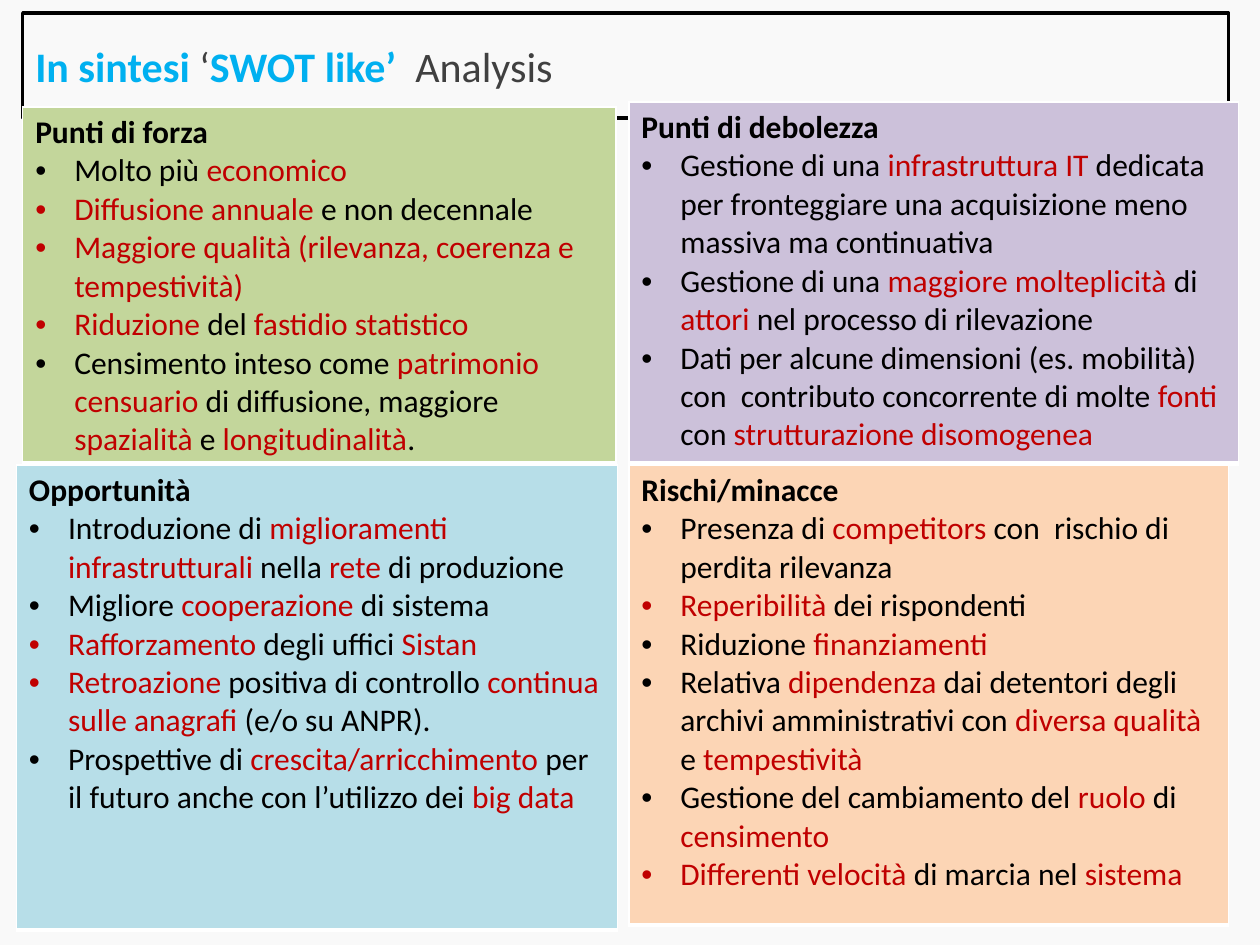
from dataclasses import dataclass

from lxml import etree
from pptx import Presentation
from pptx.dml.color import RGBColor
from pptx.enum.text import MSO_ANCHOR, MSO_AUTO_SIZE, PP_ALIGN
from pptx.oxml.ns import qn
from pptx.util import Inches, Pt

LEFT = PP_ALIGN.LEFT
MIDDLE = MSO_ANCHOR.MIDDLE
GROW = MSO_AUTO_SIZE.SHAPE_TO_FIT_TEXT
TITLE_ONLY = 5


@dataclass(frozen=True)
class Theme:
    font: str = "Calibri"
    title_size: int = 24
    body_size: int = 18
    background: str = "F9F9F9"
    title: str = "404040"
    title_accent: str = "00B0F0"
    text: str = "000000"
    accent: str = "C00000"
    frame: str = "000000"
    border: str = "FFFFFF"
    strengths: str = "C3D69B"
    weaknesses: str = "CCC1DA"
    opportunities: str = "B7DEE8"
    threats: str = "FCD5B5"


@dataclass(frozen=True)
class Quadrant:
    heading: str
    left: float
    top: float
    width: float
    height: float
    fill: str
    points: tuple[str, ...]


THEME = Theme()
BULLET_INDENT = 0.31
BORDERS = {"L": 1, "R": 1, "T": 1, "B": 3}

# Asterisks enclose the highlighted words
TITLE = "*In sintesi *‘*SWOT like’*  Analysis"
QUADRANTS = (
    Quadrant("Punti di forza", 0.18, 0.85, 4.71, 2.83, THEME.strengths, (
        "Molto più *economico*",
        "*Diffusione annuale* e non decennale",
        "*Maggiore qualità (rilevanza, coerenza e tempestività)*",
        "*Riduzione* del *fastidio statistico*",
        "Censimento inteso come *patrimonio censuario* di diffusione, "
        "maggiore *spazialità* e *longitudinalità*.",
    )),
    Quadrant("Opportunità", 0.13, 3.69, 4.77, 3.69, THEME.opportunities, (
        "Introduzione di *miglioramenti infrastrutturali* nella *rete* di produzione",
        "Migliore *cooperazione* di sistema",
        "*Rafforzamento* degli uffici *Sistan*",
        "*Retroazione* positiva di controllo *continua sulle anagrafi* (e/o su ANPR).",
        "Prospettive di *crescita/arricchimento* per il futuro anche "
        "con l’utilizzo dei *big data*",
    )),
    Quadrant("Punti di debolezza", 4.99, 0.81, 4.84, 2.87, THEME.weaknesses, (
        "Gestione di una *infrastruttura IT* dedicata per fronteggiare "
        "una acquisizione meno massiva ma continuativa",
        "Gestione di una *maggiore molteplicità* di *attori* "
        "nel processo di rilevazione",
        "Dati per alcune dimensioni (es. mobilità) con  contributo concorrente "
        "di molte *fonti* con *strutturazione disomogenea*",
    )),
    Quadrant("Rischi/minacce", 4.99, 3.69, 4.76, 3.65, THEME.threats, (
        "Presenza di *competitors *con  rischio di perdita rilevanza",
        "*Reperibilità* dei rispondenti",
        "Riduzione *finanziamenti*",
        "Relativa *dipendenza* dai detentori degli archivi amministrativi "
        "con *diversa qualità *e *tempestività*",
        "Gestione del cambiamento del *ruolo* di *censimento*",
        "*Differenti velocità* di marcia nel *sistema*",
    )),
)


def write(para, text: str, *, size: int, color: str, accent: str,
          bold: bool = False, accent_bold: bool = False) -> None:
    """Fill a paragraph, giving the words between asterisks the accent format."""
    para.alignment = LEFT
    for index, part in enumerate(text.split("*")):
        if not part:
            continue
        marked = index % 2 == 1
        span = para.add_run()
        span.text = part
        span.font.name = THEME.font
        span.font.size = Pt(size)
        span.font.bold = accent_bold if marked else bold
        span.font.color.rgb = RGBColor.from_string(accent if marked else color)


def add_bullet(para) -> None:
    properties = para._p.get_or_add_pPr()
    properties.set("marL", str(Inches(BULLET_INDENT)))
    properties.set("indent", str(-Inches(BULLET_INDENT)))
    etree.SubElement(properties, qn("a:buFont"), typeface="Arial")
    etree.SubElement(properties, qn("a:buChar"), char="•")


def add_borders(cell) -> None:
    properties = cell._tc.get_or_add_tcPr()
    for side, points in BORDERS.items():
        line = etree.SubElement(properties, qn(f"a:ln{side}"), w=str(Pt(points)))
        fill = etree.SubElement(line, qn("a:solidFill"))
        etree.SubElement(fill, qn("a:srgbClr"), val=THEME.border)


def draw_title(page) -> None:
    box = page.shapes.title
    box.left, box.top = Inches(0.18), Inches(0.27)
    box.width, box.height = Inches(9.57), Inches(0.5)
    box.line.color.rgb = RGBColor.from_string(THEME.frame)
    box.line.width = Pt(2)
    frame = box.text_frame
    frame.word_wrap = True
    frame.auto_size = GROW
    frame.vertical_anchor = MIDDLE
    write(frame.paragraphs[0], TITLE, size=THEME.title_size, color=THEME.title,
          accent=THEME.title_accent, accent_bold=True)


def draw_quadrant(page, quadrant: Quadrant) -> None:
    table = page.shapes.add_table(
        1, 1, Inches(quadrant.left), Inches(quadrant.top),
        Inches(quadrant.width), Inches(quadrant.height)).table
    table.first_row = False
    table.horz_banding = False
    cell = table.cell(0, 0)
    add_borders(cell)
    cell.fill.solid()
    cell.fill.fore_color.rgb = RGBColor.from_string(quadrant.fill)
    frame = cell.text_frame
    write(frame.paragraphs[0], quadrant.heading, size=THEME.body_size,
          color=THEME.text, accent=THEME.accent, bold=True)
    for point in quadrant.points:
        para = frame.add_paragraph()
        write(para, point, size=THEME.body_size, color=THEME.text,
              accent=THEME.accent)
        add_bullet(para)


def main() -> None:
    deck = Presentation()
    deck.slide_width, deck.slide_height = Inches(10), Inches(7.5)
    page = deck.slides.add_slide(deck.slide_layouts[TITLE_ONLY])

    # Background
    page.background.fill.solid()
    page.background.fill.fore_color.rgb = RGBColor.from_string(THEME.background)

    # Title and the four quadrants
    draw_title(page)
    for quadrant in QUADRANTS:
        draw_quadrant(page, quadrant)

    deck.save("out.pptx")


if __name__ == "__main__":
    main()
